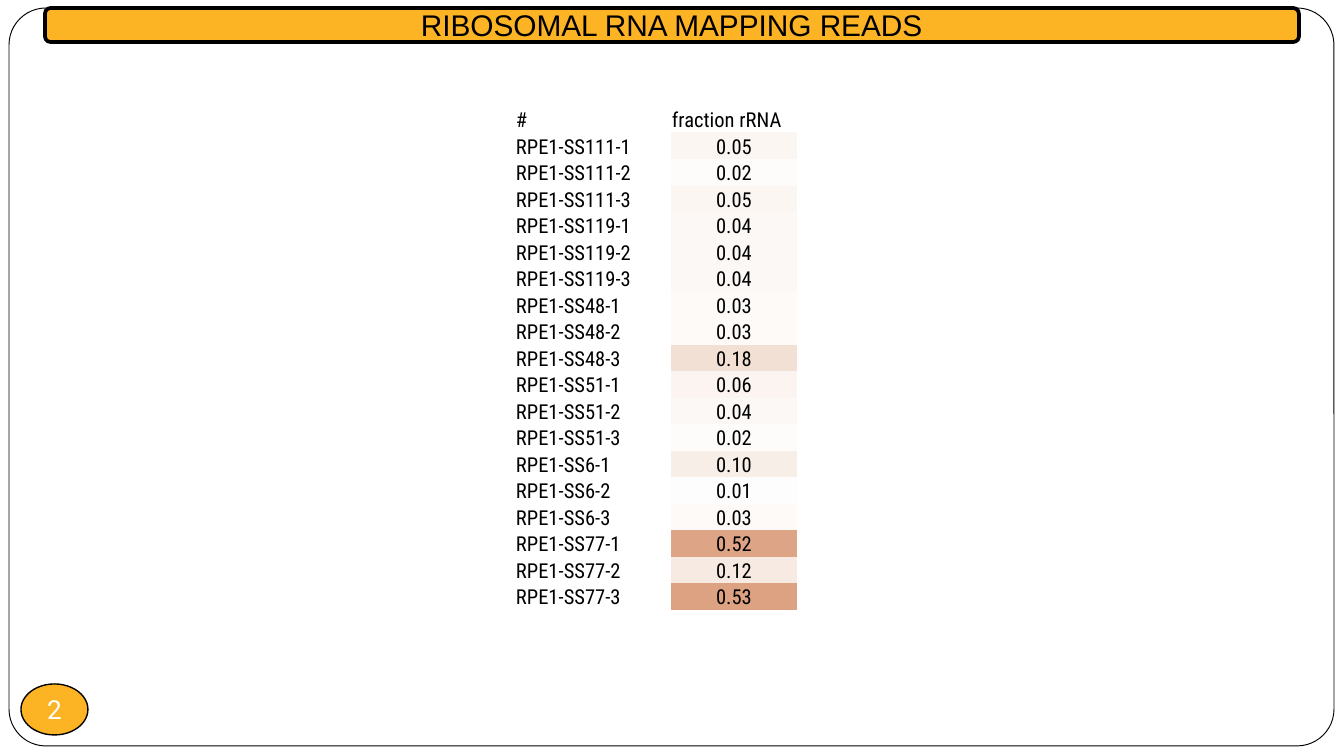
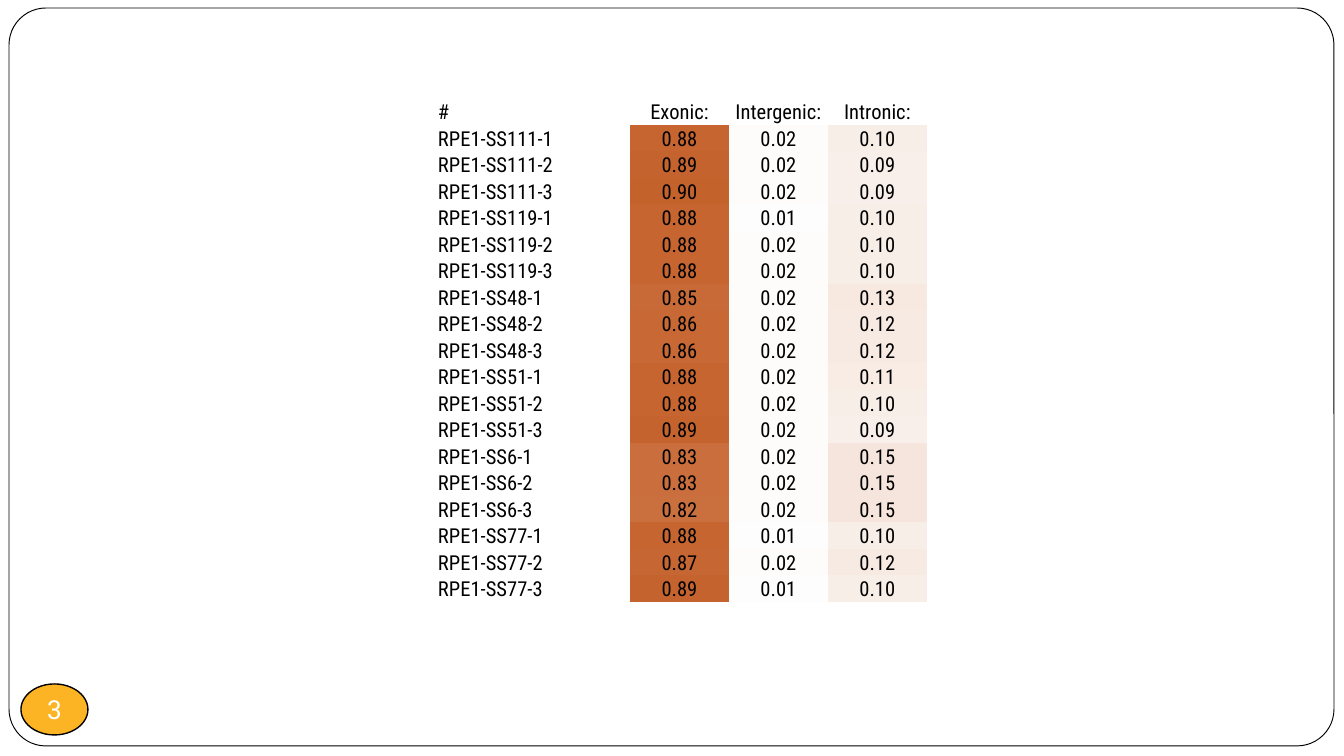
"""Build two slides of heat-mapped read fractions per RPE1 sample."""
import pptx
import pptx.dml.color
import pptx.enum.shapes
import pptx.enum.text
import pptx.oxml.ns
import pptx.util

RGBColor = pptx.dml.color.RGBColor
SHAPE = pptx.enum.shapes.MSO_SHAPE
ALIGN = pptx.enum.text.PP_ALIGN
ANCHOR = pptx.enum.text.MSO_ANCHOR

BLACK = RGBColor(0x00, 0x00, 0x00)
WHITE = RGBColor(0xFF, 0xFF, 0xFF)
AMBER = RGBColor(0xFC, 0xB4, 0x24)
HEAT = RGBColor(0xBE, 0x50, 0x14)

PX_PER_INCH = 134.4
SLIDE_SIZE = (1344, 756)
FRAME = (9, 8, 1325, 738)
BANNER = (45, 8, 1254, 34)
BADGE = (21, 684, 67, 51)
GRID_HEIGHT = 504
NO_GRID_STYLE = "{2D5ABB26-0587-4C30-8999-92F81FD0307C}"

LINES = ("SS111", "SS119", "SS48", "SS51", "SS6", "SS77")
SAMPLES = [f"RPE1-{line}-{replicate}" for line in LINES for replicate in (1, 2, 3)]

PAGES = [
    {
        "number": 2,
        "title": "RIBOSOMAL RNA MAPPING READS",
        "corner": (515, 106),
        "widths": (156, 126),
        "header_align": ALIGN.LEFT,
        "fractions": {
            "fraction rRNA": (0.05, 0.02, 0.05, 0.04, 0.04, 0.04, 0.03, 0.03, 0.18,
                              0.06, 0.04, 0.02, 0.10, 0.01, 0.03, 0.52, 0.12, 0.53),
        },
    },
    {
        "number": 3,
        "title": None,
        "corner": (437, 98),
        "widths": (193, 99, 99, 99),
        "header_align": ALIGN.CENTER,
        "fractions": {
            "Exonic:": (0.88, 0.89, 0.90, 0.88, 0.88, 0.88, 0.85, 0.86, 0.86,
                        0.88, 0.88, 0.89, 0.83, 0.83, 0.82, 0.88, 0.87, 0.89),
            "Intergenic:": (0.02, 0.02, 0.02, 0.01, 0.02, 0.02, 0.02, 0.02, 0.02,
                            0.02, 0.02, 0.02, 0.02, 0.02, 0.02, 0.01, 0.02, 0.01),
            "Intronic:": (0.10, 0.09, 0.09, 0.10, 0.10, 0.10, 0.13, 0.12, 0.12,
                          0.11, 0.10, 0.09, 0.15, 0.15, 0.15, 0.10, 0.12, 0.10),
        },
    },
]


def px(length):
    return pptx.util.Emu(round(length * 914400 / PX_PER_INCH))


def heat_colour(fraction):
    return RGBColor(*(round(255 - fraction * (255 - full)) for full in HEAT))


def write(text_frame, text, *, font, size, colour=BLACK, align=ALIGN.CENTER):
    paragraph = text_frame.paragraphs[0]
    paragraph.alignment = align
    run = paragraph.add_run()
    run.text = text
    run.font.name = font
    run.font.size = pptx.util.Pt(size)
    run.font.color.rgb = colour


def set_margins(holder, left, top, right, bottom):
    holder.margin_left, holder.margin_top = px(left), px(top)
    holder.margin_right, holder.margin_bottom = px(right), px(bottom)


def add_panel(slide, kind, place, fill, line_width):
    panel = slide.shapes.add_shape(kind, *map(px, place))
    panel.shadow.inherit = False
    panel.fill.solid()
    panel.fill.fore_color.rgb = fill
    panel.line.color.rgb = BLACK
    panel.line.width = pptx.util.Pt(line_width)
    panel.text_frame.vertical_anchor = ANCHOR.MIDDLE
    return panel


def add_chrome(slide, number, title):
    frame = add_panel(slide, SHAPE.ROUNDED_RECTANGLE, FRAME, WHITE, 0.5)
    frame.adjustments[0] = 0.05
    badge = add_panel(slide, SHAPE.OVAL, BADGE, AMBER, 0.75)
    badge.text_frame.word_wrap = False
    set_margins(badge.text_frame, 0, 0, 0, 0)
    write(badge.text_frame, str(number), font="Roboto", size=14, colour=WHITE)
    if title:
        banner = add_panel(slide, SHAPE.ROUNDED_RECTANGLE, BANNER, AMBER, 2)
        banner.text_frame.word_wrap = True
        write(banner.text_frame, title, font="Arial", size=16)


def fill_cell(cell, text, align, fraction=None):
    cell.vertical_anchor = ANCHOR.BOTTOM
    set_margins(cell, 1, 1, 1, 0)
    write(cell.text_frame, text, font="Roboto Condensed", size=11, align=align)
    if fraction is None:
        cell.fill.background()
    else:
        cell.fill.solid()
        cell.fill.fore_color.rgb = heat_colour(fraction)


def add_fractions(slide, corner, widths, header_align, fractions):
    row_count = len(SAMPLES) + 1
    holder = slide.shapes.add_table(
        row_count, len(widths), *map(px, (*corner, sum(widths), GRID_HEIGHT)))
    for style in holder.element.iter(pptx.oxml.ns.qn("a:tableStyleId")):
        style.text = NO_GRID_STYLE
    grid = holder.table
    grid.first_row = grid.horz_banding = False
    for column, width in zip(grid.columns, widths):
        column.width = px(width)
    for row in grid.rows:
        row.height = px(GRID_HEIGHT / row_count)

    for row, label in enumerate(["#", *SAMPLES]):
        fill_cell(grid.cell(row, 0), label, ALIGN.LEFT)
    for column, (heading, values) in enumerate(fractions.items(), start=1):
        fill_cell(grid.cell(0, column), heading, header_align)
        for row, fraction in enumerate(values, start=1):
            fill_cell(grid.cell(row, column), f"{fraction:.2f}", ALIGN.CENTER, fraction)


def main():
    deck = pptx.Presentation()
    deck.slide_width, deck.slide_height = map(px, SLIDE_SIZE)
    for page in PAGES:
        slide = deck.slides.add_slide(deck.slide_layouts[6])
        add_chrome(slide, page["number"], page["title"])
        add_fractions(slide, page["corner"], page["widths"],
                      page["header_align"], page["fractions"])
    deck.save("out.pptx")


if __name__ == "__main__":
    main()
